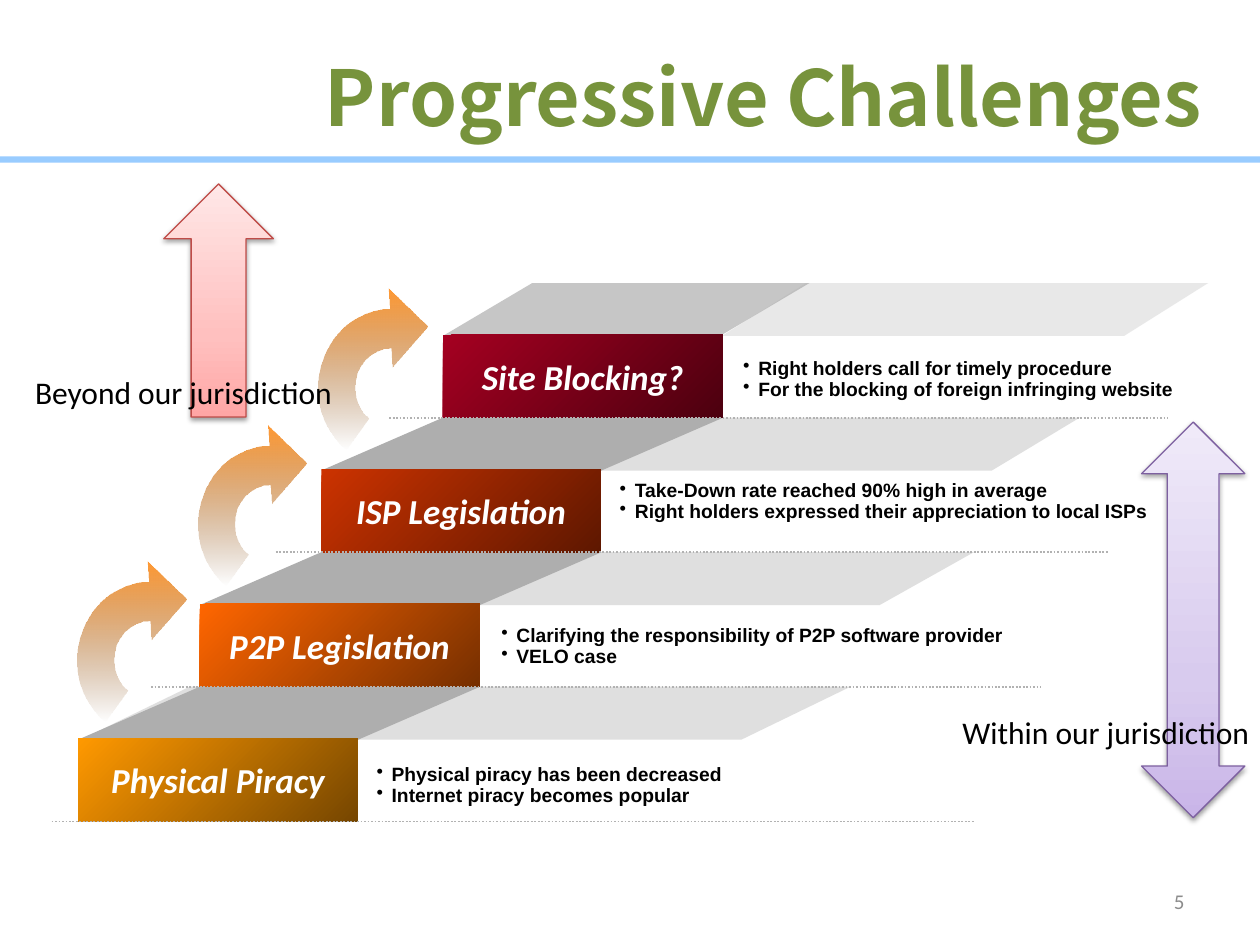
from lxml import etree
from pptx import Presentation
from pptx.dml.color import RGBColor
from pptx.enum import dml, shapes, text
from pptx.oxml import parse_xml
from pptx.oxml.ns import nsdecls, qn
from pptx.util import Inches, Pt

BLACK = RGBColor(0, 0, 0)
WHITE = RGBColor(255, 255, 255)
GREEN = RGBColor(0x77, 0x93, 0x3C)
TAN = RGBColor(0xC4, 0xBD, 0x97)
SKY = RGBColor(0x99, 0xCC, 0xFF)
GREY = RGBColor(0x8C, 0x8C, 0x8C)
DOTS = RGBColor(0xB2, 0xB2, 0xB2)
PALE = RGBColor(0xDF, 0xDF, 0xDF)
DARK = RGBColor(0xAE, 0xAE, 0xAE)
AMBER = RGBColor(0xFF, 0x99, 0x00)
ORANGE = RGBColor(0xFF, 0x66, 0x00)
RUST = RGBColor(0xCC, 0x33, 0x00)
WINE = RGBColor(0xA5, 0x00, 0x21)
PEACH = RGBColor(0xFF, 0x99, 0x33)
PURPLE = RGBColor(0x7D, 0x60, 0xA0)
RED = RGBColor(0xBF, 0x4C, 0x48)
LILACS = [RGBColor.from_string(c) for c in ("C9B5E8", "D8CBEE", "F0EAF9")]
PINKS = [RGBColor.from_string(c) for c in ("FFA6A5", "FFC0BF", "FFE7E7")]

KIND = shapes.MSO_SHAPE
ALIGN = text.PP_ALIGN
MID = text.MSO_ANCHOR.MIDDLE
SHADE = '<a:gamma/><a:shade val="46275"/><a:invGamma/>'
CLEAR = '<a:alpha val="0"/>'


def add_shape(slide, kind, box, color=None, alpha=100):
    part = slide.shapes.add_shape(kind, *map(Inches, box))
    part.shadow.inherit = False
    part.line.fill.background()
    if color is not None:
        part.fill.solid()
        part.fill.fore_color.rgb = color
    if alpha < 100:
        tint = part._element.spPr.find(".//" + qn("a:srgbClr"))
        etree.SubElement(tint, qn("a:alpha")).set("val", str(alpha * 1000))
    return part


def shade(part, stops, angle):
    """Fill with a gradient of (percent, colour, colour changes) stops."""
    part.fill.gradient()
    grad = part._element.spPr.find(qn("a:gradFill"))
    marks = grad.find(qn("a:gsLst"))
    for old in list(marks):
        marks.remove(old)
    for pos, color, mods in stops:
        marks.append(parse_xml(
            f'<a:gs {nsdecls("a")} pos="{pos * 1000}">'
            f'<a:srgbClr val="{color}">{mods}</a:srgbClr></a:gs>'))
    grad.find(qn("a:lin")).set("ang", str(angle * 60000))


def add_run(para, words, size, color, font="Calibri", bold=False, slant=False):
    run = para.add_run()
    run.text = words
    run.font.size, run.font.name = Pt(size), font
    run.font.bold, run.font.italic = bold, slant
    run.font.color.rgb = color
    return run


def add_box(slide, box):
    frame = slide.shapes.add_textbox(*map(Inches, box)).text_frame
    frame.word_wrap = True
    return frame


def add_label(slide, box, words, size, color, align=ALIGN.LEFT, **style):
    frame = add_box(slide, box)
    para = frame.paragraphs[0]
    para.alignment = align
    return frame, add_run(para, words, size, color, **style)


def add_notes(slide, box, lines):
    """Bulleted text beside a step."""
    frame = add_box(slide, box)
    for i, words in enumerate(lines):
        para = frame.add_paragraph() if i else frame.paragraphs[0]
        props = para._p.get_or_add_pPr()
        props.set("marL", str(Inches(0.12)))
        props.set("indent", str(Inches(-0.12)))
        etree.SubElement(props, qn("a:buChar")).set("char", "•")
        para.line_spacing = 0.9
        add_run(para, words, 11, BLACK, "Arial", bold=True)


def add_step(slide, left, top, name, color, pale, dark, rule, note, lines):
    """One stair: treads behind, riser in front, dotted rule, notes."""
    alpha = 70 if color == WINE else 100
    for (x, wide, slope), tone in ((pale, PALE), ((left, *dark), DARK)):
        tread = add_shape(slide, KIND.PARALLELOGRAM,
                          (x, top - 0.41, wide, 0.42), tone, alpha)
        tread.adjustments[0] = slope
    riser = add_shape(slide, KIND.RECTANGLE, (left, top, 2.22, 0.66))
    shade(riser, [(0, color, ""), (100, color, SHADE)], 45)
    frame = riser.text_frame
    frame.word_wrap, frame.vertical_anchor = False, MID
    frame.paragraphs[0].alignment = ALIGN.CENTER
    add_run(frame.paragraphs[0], name, 20, WHITE, bold=True, slant=True)

    base = Inches(top + 0.66)
    line = slide.shapes.add_connector(shapes.MSO_CONNECTOR.STRAIGHT,
                                      Inches(rule[0]), base, Inches(rule[1]), base)
    line.line.color.rgb = DOTS
    line.line.width = Pt(1)
    line.line.dash_style = dml.MSO_LINE.ROUND_DOT
    etree.SubElement(line._element.spPr, qn("a:effectLst"))
    add_notes(slide, (*note, 0.43), lines)


# Outline of a curved arrow; CURVES holds the first point of each cubic
BEND = [(0.57, 0.47), (0.41, 0.47), (0.28, 0.62), (0.29, 0.79), (0.29, 0.88),
        (0.33, 0.97), (0.4, 1.02), (0.22, 1.27), (0.08, 1.15), (0, 0.98),
        (0, 0.8), (-0.01, 0.45), (0.24, 0.17), (0.56, 0.16), (0.55, 0),
        (0.86, 0.3), (0.58, 0.62)]
CURVES = (1, 4, 8, 11)


def add_bend(slide, left, top):
    pts = [(Inches(left + x), Inches(top + y)) for x, y in BEND]
    form = slide.shapes.build_freeform(*pts[0], scale=1.0)
    form.add_line_segments(pts[1:], close=True)
    part = form.convert_to_shape()
    route = part._element.spPr.find(".//" + qn("a:path"))
    legs = list(route)
    for first in CURVES:
        cubic = etree.Element(qn("a:cubicBezTo"))
        legs[first].addprevious(cubic)
        for leg in legs[first:first + 3]:
            cubic.append(leg[0])
            route.remove(leg)
    part.shadow.inherit = False
    part.line.fill.background()
    shade(part, [(0, PEACH, ""), (100, PEACH, SHADE + CLEAR)], 90)


def add_range(slide, kind, box, tones, edge, label, words):
    """Shadowed block arrow with its caption."""
    part = add_shape(slide, kind, box)
    shade(part, [(p, c, "") for p, c in zip((0, 35, 100), tones)], 270)
    part.line.color.rgb = edge
    part.line.width = Pt(0.75)
    part._element.spPr.find(qn("a:effectLst")).append(parse_xml(
        f'<a:outerShdw {nsdecls("a")} blurRad="{Pt(3.1)}" dist="{Pt(1.6)}" '
        'dir="5400000" rotWithShape="0"><a:srgbClr val="000000">'
        '<a:alpha val="38000"/></a:srgbClr></a:outerShdw>'))
    add_label(slide, label, words, 18, BLACK)


def add_head(slide, box):
    title = add_label(slide, box, "Progressive Challenges", 44, GREEN,
                      ALIGN.CENTER, font="Noto Sans CJK SC", bold=True)[1]
    title._r.get_or_add_rPr().insert(0, parse_xml(
        f'<a:ln {nsdecls("a")} w="{Pt(0.15)}"><a:solidFill>'
        f'<a:srgbClr val="{TAN}"/></a:solidFill></a:ln>'))


# name, colour, pale tread (left, width, slope), dark tread (width, slope),
# rule (from, to), notes (left, top, width), lines
STEPS = [
    ("Physical Piracy", AMBER, (0.64, 6.11, 2.06), (3.19, 2.3), (0.41, 7.73),
     (2.89, 6.02, 3.53),
     ["Physical piracy has been decreased", "Internet piracy becomes popular"]),
    ("P2P Legislation", ORANGE, (3.09, 4.64, 1.78), (3.19, 2.3), (1.2, 8.26),
     (3.88, 4.92, 4.89),
     ["Clarifying the responsibility of P2P software provider", "VELO case"]),
    ("ISP Legislation", RUST, (4.37, 4.2, 1.66), (3.19, 2.3), (2.19, 8.8),
     (4.82, 3.77, 4.45),
     ["Take-Down rate reached 90% high in average",
      "Right holders expressed their appreciation to local ISPs"]),
    ("Site Blocking?", WINE, (5.73, 3.86, 1.59), (2.91, 1.69), (3.09, 9.27),
     (5.8, 2.8, 3.8),
     ["Right holders call for timely procedure",
      "For the blocking of foreign infringing website"]),
]


def main():
    deck = Presentation()
    deck.slide_width, deck.slide_height = Inches(10), Inches(7.5)
    slide = deck.slides.add_slide(deck.slide_layouts[6])

    # Header
    add_shape(slide, KIND.RECTANGLE, (-0.04, 1.24, 10.06, 0.05), SKY)
    add_head(slide, (1.77, 0.34, 8.58, 1.12))

    # Staircase, from the bottom up
    for i, step in enumerate(STEPS):
        add_step(slide, 0.62 + 0.965 * i, 5.86 - 1.068 * i, *step)
    for i in range(len(STEPS) - 1):
        add_bend(slide, 0.62 + 0.955 * i, 4.46 - 1.083 * i)

    # Jurisdiction ranges
    add_range(slide, KIND.UP_DOWN_ARROW, (9.06, 3.35, 0.82, 3.14), LILACS, PURPLE,
              (7.54, 5.61, 2.52, 0.4), "Within our jurisdiction")
    add_range(slide, KIND.UP_ARROW, (1.3, 1.46, 0.87, 1.85), PINKS, RED,
              (0.18, 2.91, 3, 0.4), "Beyond our jurisdiction")

    # Page number
    frame, _ = add_label(slide, (7.17, 6.95, 2.33, 0.4), "5", 12, GREY, ALIGN.RIGHT)
    frame.vertical_anchor = MID
    deck.save("out.pptx")


if __name__ == "__main__":
    main()
